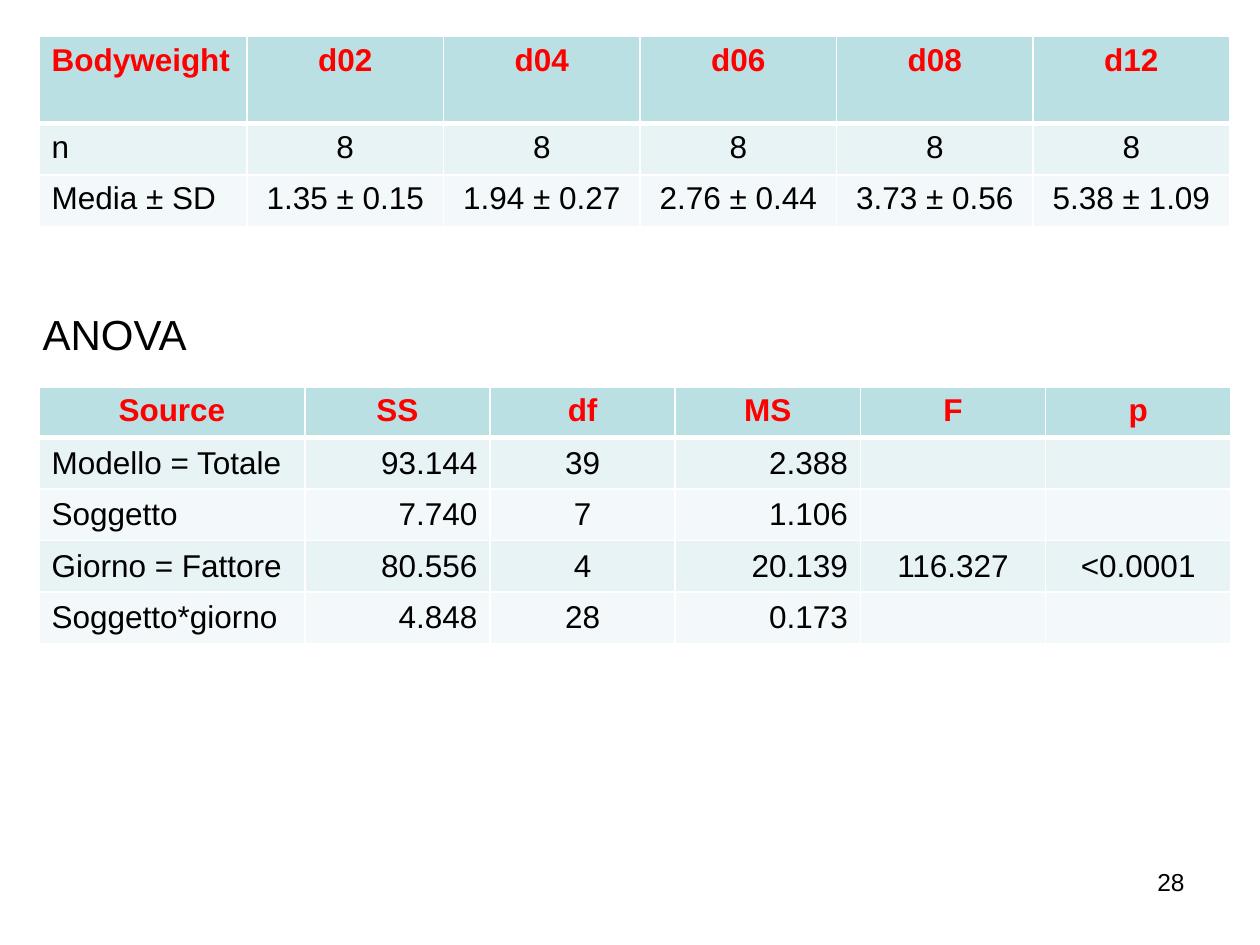
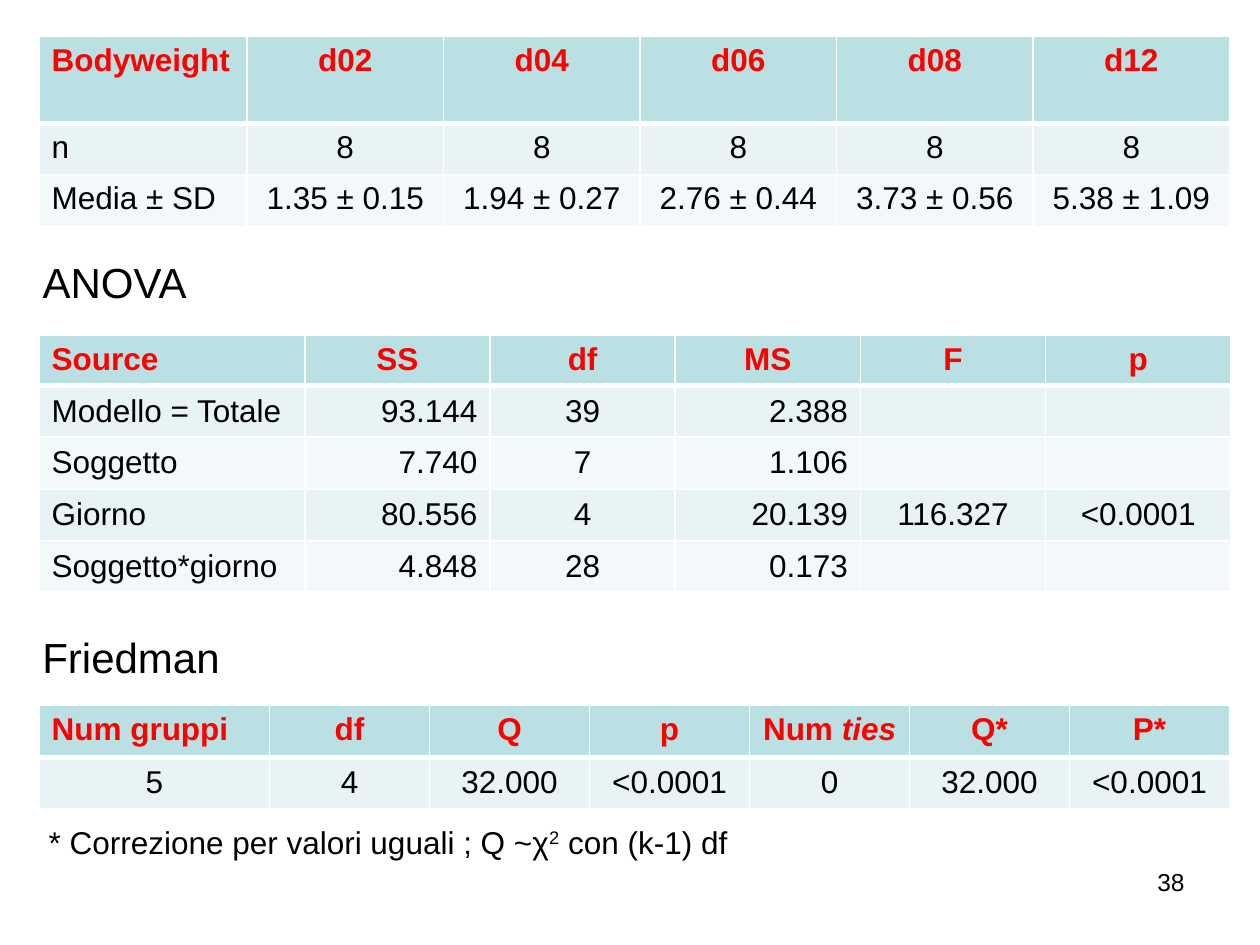
import pptx
import pptx.dml.color
import pptx.enum.text
import pptx.oxml
import pptx.oxml.ns
import pptx.util

Inches = pptx.util.Inches
Pt = pptx.util.Pt
RGBColor = pptx.dml.color.RGBColor
ALIGN = pptx.enum.text.PP_ALIGN
ANCHOR = pptx.enum.text.MSO_ANCHOR

# Shared style
BLACK = RGBColor(0x00, 0x00, 0x00)
RED = RGBColor(0xFF, 0x00, 0x00)
WHITE = RGBColor(0xFF, 0xFF, 0xFF)
HEADER_FILL = RGBColor(0xBB, 0xE0, 0xE3)
BAND_FILLS = (RGBColor(0xE7, 0xF3, 0xF4), RGBColor(0xF3, 0xF9, 0xFA))
ALIGNMENTS = {"l": ALIGN.LEFT, "c": ALIGN.CENTER, "r": ALIGN.RIGHT}

BODY = {"name": "Arial", "size": Pt(18), "color": BLACK, "bold": False}
HEADER = BODY | {"color": RED, "bold": True}
HEADING = BODY | {"size": Pt(24)}
PAGE_NUMBER = BODY | {"size": Pt(14)}

TABLE_LEFT = 0.31
TEXT_LEFT = 0.23
ROW_HEIGHT = 0.41
THIN, THICK = 1, 3

# Table contents; a cell is a string or a list of (text, extra format) spans
BODYWEIGHT_ROWS = [
    ["Bodyweight", "d02", "d04", "d06", "d08", "d12"],
    ["n"] + ["8"] * 5,
    ["Media ± SD", "1.35 ± 0.15", "1.94 ± 0.27", "2.76 ± 0.44",
     "3.73 ± 0.56", "5.38 ± 1.09"],
]
FRIEDMAN_ROWS = [
    ["Num gruppi", "df", "Q", "p",
     [("Num ", {}), ("ties", {"italic": True})], "Q*", "P*"],
    ["5", "4", "32.000", "<0.0001", "0", "32.000", "<0.0001"],
]
FRIEDMAN_NOTE = [
    ("* Correzione per valori uguali ; Q ~χ", {}),
    ("2", {"baseline": 30000}),
    (" con (k-1) df", {}),
]


def anova_rows(day_label):
    return [
        ["Source", "SS", "df", "MS", "F", "p"],
        ["Modello = Totale", "93.144", "39", "2.388", "", ""],
        ["Soggetto", "7.740", "7", "1.106", "", ""],
        [day_label, "80.556", "4", "20.139", "116.327", "<0.0001"],
        ["Soggetto*giorno", "4.848", "28", "0.173", "", ""],
    ]


# Text
def write_text(para, content, style, align):
    para.alignment = ALIGNMENTS[align]
    spans = [(content, {})] if isinstance(content, str) else content
    for text, extra in spans:
        if not text:
            continue
        span = para.add_run()
        span.text = text
        for key, value in (style | extra).items():
            if key == "color":
                span.font.color.rgb = value
            elif key == "baseline":
                span._r.get_or_add_rPr().set("baseline", str(value))
            else:
                setattr(span.font, key, value)


def add_text(page, content, left, top, width, height, style, align="c", wrap=False):
    box = page.shapes.add_textbox(Inches(left), Inches(top),
                                  Inches(width), Inches(height))
    box.text_frame.word_wrap = wrap
    write_text(box.text_frame.paragraphs[0], content, style, align)


# Tables
def set_borders(cell, top, bottom):
    properties = cell._tc.get_or_add_tcPr()
    widths = {"lnL": THIN, "lnR": THIN, "lnT": top, "lnB": bottom}
    for side, width in widths.items():
        properties.append(pptx.oxml.parse_xml(
            f'<a:{side} {pptx.oxml.ns.nsdecls("a")} w="{Pt(width)}">'
            f'<a:solidFill><a:srgbClr val="{WHITE}"/></a:solidFill></a:{side}>'))


def add_table(page, rows, top, first_width, other_width, header_aligns,
              body_aligns, header_height=ROW_HEIGHT, anchor=ANCHOR.MIDDLE):
    column_count = len(rows[0])
    widths = [first_width] + [other_width] * (column_count - 1)
    heights = [header_height] + [ROW_HEIGHT] * (len(rows) - 1)
    table = page.shapes.add_table(
        len(rows), column_count, Inches(TABLE_LEFT), Inches(top),
        Inches(sum(widths)), Inches(sum(heights))).table
    table.horz_banding = False
    for column, width in zip(table.columns, widths):
        column.width = Inches(width)
    for row_index, row in enumerate(rows):
        table.rows[row_index].height = Inches(heights[row_index])
        is_header = row_index == 0
        aligns = header_aligns if is_header else body_aligns
        for column_index, content in enumerate(row):
            cell = table.cell(row_index, column_index)
            set_borders(cell, THICK if row_index == 1 else THIN,
                        THICK if is_header else THIN)
            cell.fill.solid()
            cell.fill.fore_color.rgb = (
                HEADER_FILL if is_header else BAND_FILLS[(row_index - 1) % 2])
            cell.vertical_anchor = ANCHOR.TOP if is_header else anchor
            write_text(cell.text_frame.paragraphs[0], content,
                       HEADER if is_header else BODY, aligns[column_index])


def add_anova(page, heading_top, table_top, day_label, header_aligns):
    add_text(page, "ANOVA", TEXT_LEFT, heading_top, 1.36, 0.5, HEADING)
    add_table(page, anova_rows(day_label), table_top, 2.11, 1.47,
              header_aligns, "lrcrcc", header_height=0.39)


def add_friedman(page):
    add_text(page, "Friedman", TEXT_LEFT, 4.96, 1.62, 0.5, HEADING)
    add_table(page, FRIEDMAN_ROWS, 5.6, 1.83, 1.27, "lcccccc", "ccccccc")
    add_text(page, FRIEDMAN_NOTE, TEXT_LEFT, 6.48, 5.7, 0.4, BODY)


# Page with the parts both slides share
def add_page(deck, number):
    page = deck.slides.add_slide(deck.slide_layouts[6])
    add_text(page, str(number), 8.54, 6.83, 0.96, 0.52, PAGE_NUMBER, "r", wrap=True)
    add_table(page, BODYWEIGHT_ROWS, 0.29, 1.65, 1.56, "lccccc", "lccccc",
              header_height=0.69, anchor=ANCHOR.TOP)
    return page


def main():
    deck = pptx.Presentation()
    deck.slide_width, deck.slide_height = Inches(10), Inches(7.5)

    # Parametric test alone
    page = add_page(deck, 28)
    add_anova(page, 2.4, 3.07, "Giorno = Fattore", "cccccc")

    # Parametric and rank tests together
    page = add_page(deck, 38)
    add_anova(page, 1.99, 2.66, "Giorno", "lccccc")
    add_friedman(page)

    deck.save("out.pptx")


if __name__ == "__main__":
    main()
